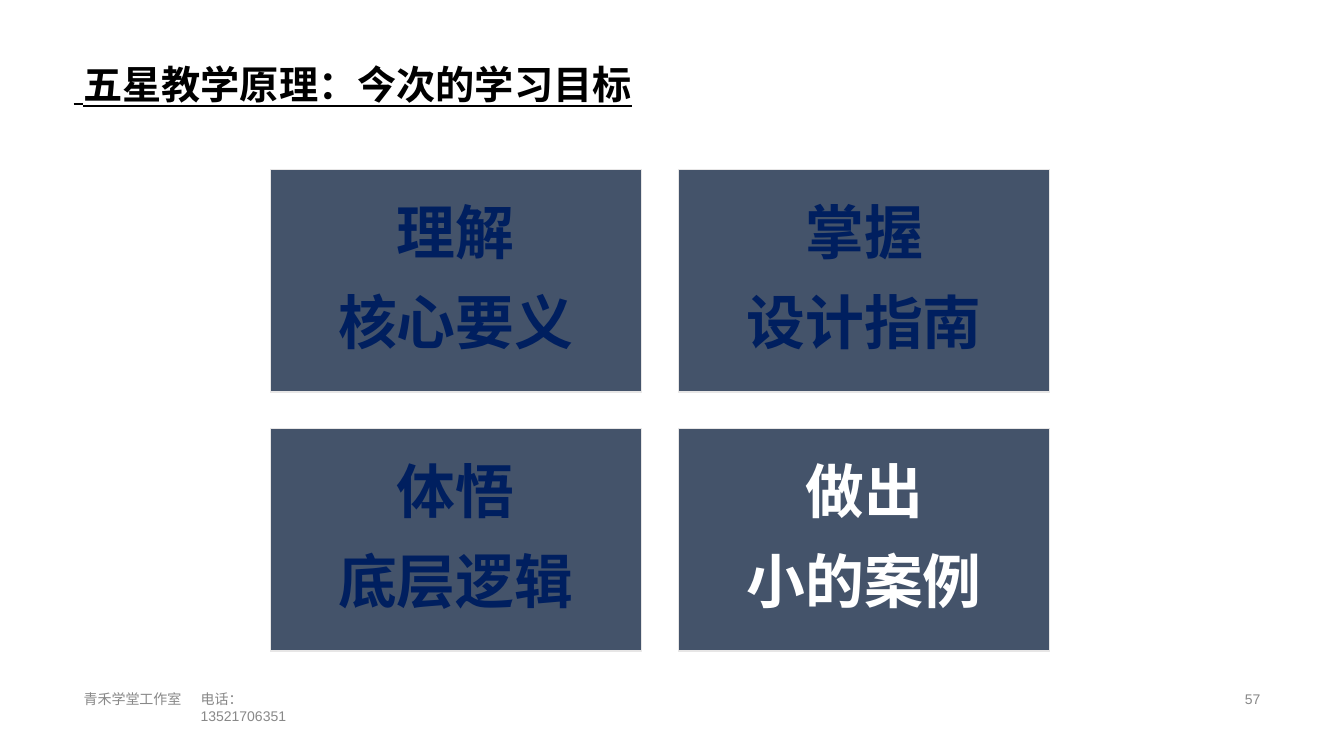
"""Build the learning-goals slide with four goal cards."""
from lxml import etree
from pptx import Presentation
from pptx import util as u
from pptx.dml.color import RGBColor
from pptx.enum import shapes, text
from pptx.oxml.ns import qn

COLOURS = {
    "title": "000000", "footer": "888888", "card": "44536A",
    "border": "E7E6E6", "goal": "001F5F", "current": "FFFFFF",
}
CHINESE, LATIN, SERIF = "Noto Sans CJK SC", "Arial", "Times New Roman"
GOALS = [
    (("理解", "核心要义"), "goal"), (("掌握", "设计指南"), "goal"),
    (("体悟", "底层逻辑"), "goal"), (("做出", "小的案例"), "current"),
]


def colour(name):
    return RGBColor.from_string(COLOURS[name])


def add_run(paragraph, words, *, size, tint, font=CHINESE, bold=False, underline=False):
    run = paragraph.add_run()
    run.text = words
    run.font.size = u.Pt(size)
    run.font.bold = bold
    run.font.underline = underline
    run.font.color.rgb = colour(tint)
    run.font.name = font
    east_asian = etree.SubElement(run._r.get_or_add_rPr(), qn("a:ea"))
    east_asian.set("typeface", font)


def prepare_frame(shape, top=0):
    frame = shape.text_frame
    frame.word_wrap = True
    frame.auto_size = text.MSO_AUTO_SIZE.NONE
    frame.vertical_anchor = text.MSO_ANCHOR.TOP
    frame.margin_left = frame.margin_right = frame.margin_bottom = 0
    frame.margin_top = u.Inches(top)
    return frame


def write_lines(frame, lines, *, align=text.PP_ALIGN.LEFT, spacing=None, **style):
    for index, (words, font) in enumerate(lines):
        paragraph = frame.add_paragraph() if index else frame.paragraphs[0]
        paragraph.alignment = align
        if spacing:
            paragraph.line_spacing = u.Pt(spacing)
        add_run(paragraph, words, font=font, **style)


def set_title(slide):
    title = slide.shapes.title
    title.left, title.top = u.Inches(0.73), u.Inches(0.58)
    title.width, title.height = u.Inches(11.89), u.Inches(0.49)
    paragraph = prepare_frame(title, top=0.02).paragraphs[0]
    paragraph.alignment = text.PP_ALIGN.LEFT
    style = {"size": 28, "tint": "title", "underline": True}
    add_run(paragraph, " ", font=SERIF, **style)
    add_run(paragraph, "五星教学原理：今次的学习目标", bold=True, **style)


def add_card(slide, left, top, lines, tint):
    card = slide.shapes.add_shape(
        shapes.MSO_SHAPE.RECTANGLE, u.Inches(left), u.Inches(top),
        u.Inches(3.68), u.Inches(2.21))
    card.shadow.inherit = False
    card.fill.solid()
    card.fill.fore_color.rgb = colour("card")
    card.line.color.rgb = colour("border")
    card.line.width = u.Pt(1)
    write_lines(prepare_frame(card, top=0.07), [(line, CHINESE) for line in lines],
                align=text.PP_ALIGN.CENTER, spacing=64.3, size=42, tint=tint, bold=True)


def add_footer(slide, left, top, width, height, lines, *, inset=0.02, **style):
    box = slide.shapes.add_textbox(
        u.Inches(left), u.Inches(top), u.Inches(width), u.Inches(height))
    write_lines(prepare_frame(box, top=inset), lines, size=10, tint="footer", **style)


def main():
    presentation = Presentation()
    presentation.slide_width = u.Inches(13.33)
    presentation.slide_height = u.Inches(7.5)
    slide = presentation.slides.add_slide(presentation.slide_layouts[5])
    set_title(slide)
    for index, (lines, tint) in enumerate(GOALS):
        row, column = divmod(index, 2)
        add_card(slide, 2.68 + 4.05 * column, 1.68 + 2.57 * row, lines, tint)
    add_footer(slide, 0.83, 6.83, 1, 0.21, [("青禾学堂工作室", CHINESE)])
    add_footer(slide, 1.99, 6.83, 1.29, 0.4, [("电话：", CHINESE), ("13521706351", LATIN)])
    add_footer(slide, 12.32, 6.85, 0.21, 0.18, [("57", LATIN)],
               inset=0, align=text.PP_ALIGN.CENTER)
    presentation.save("out.pptx")


if __name__ == "__main__":
    main()
